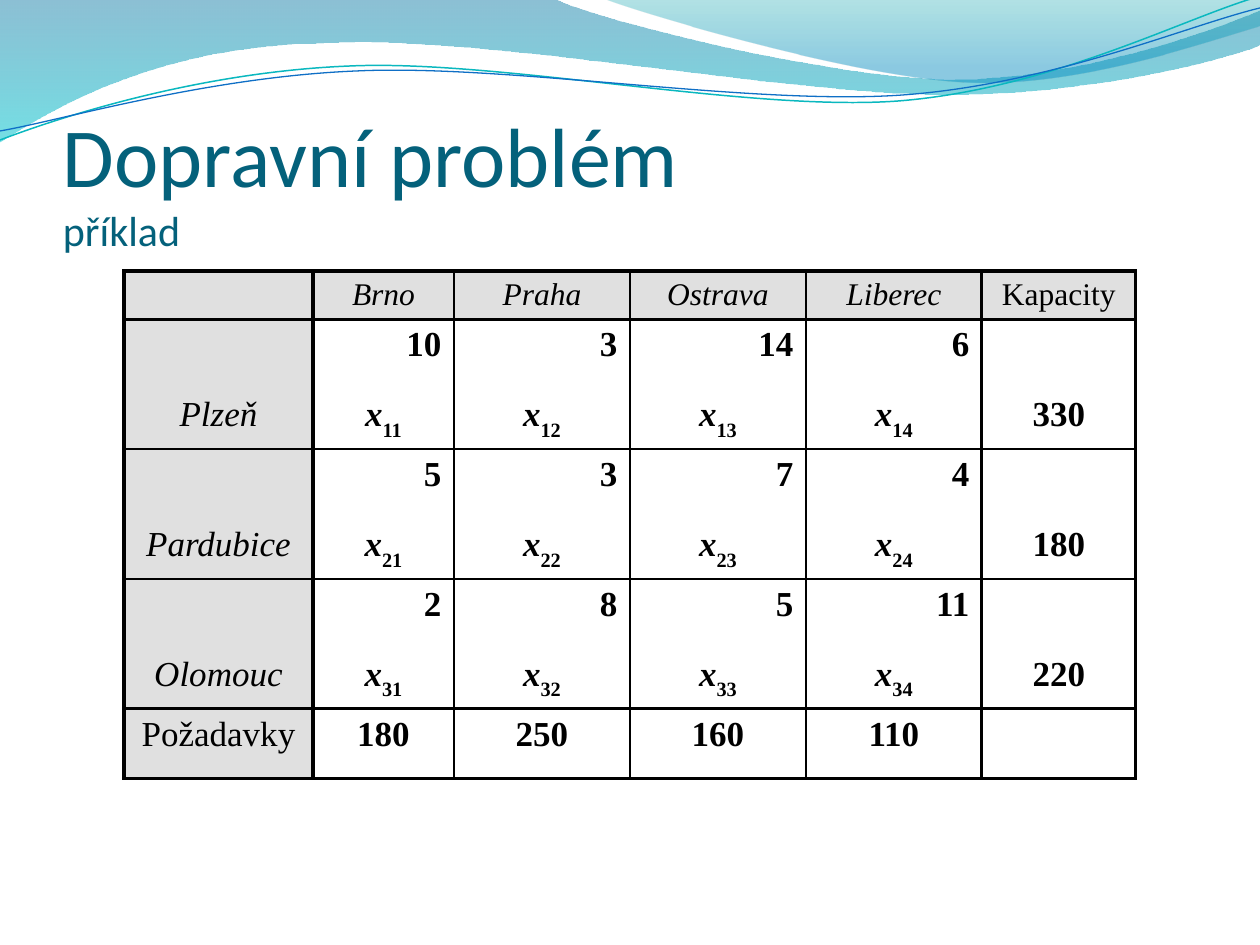
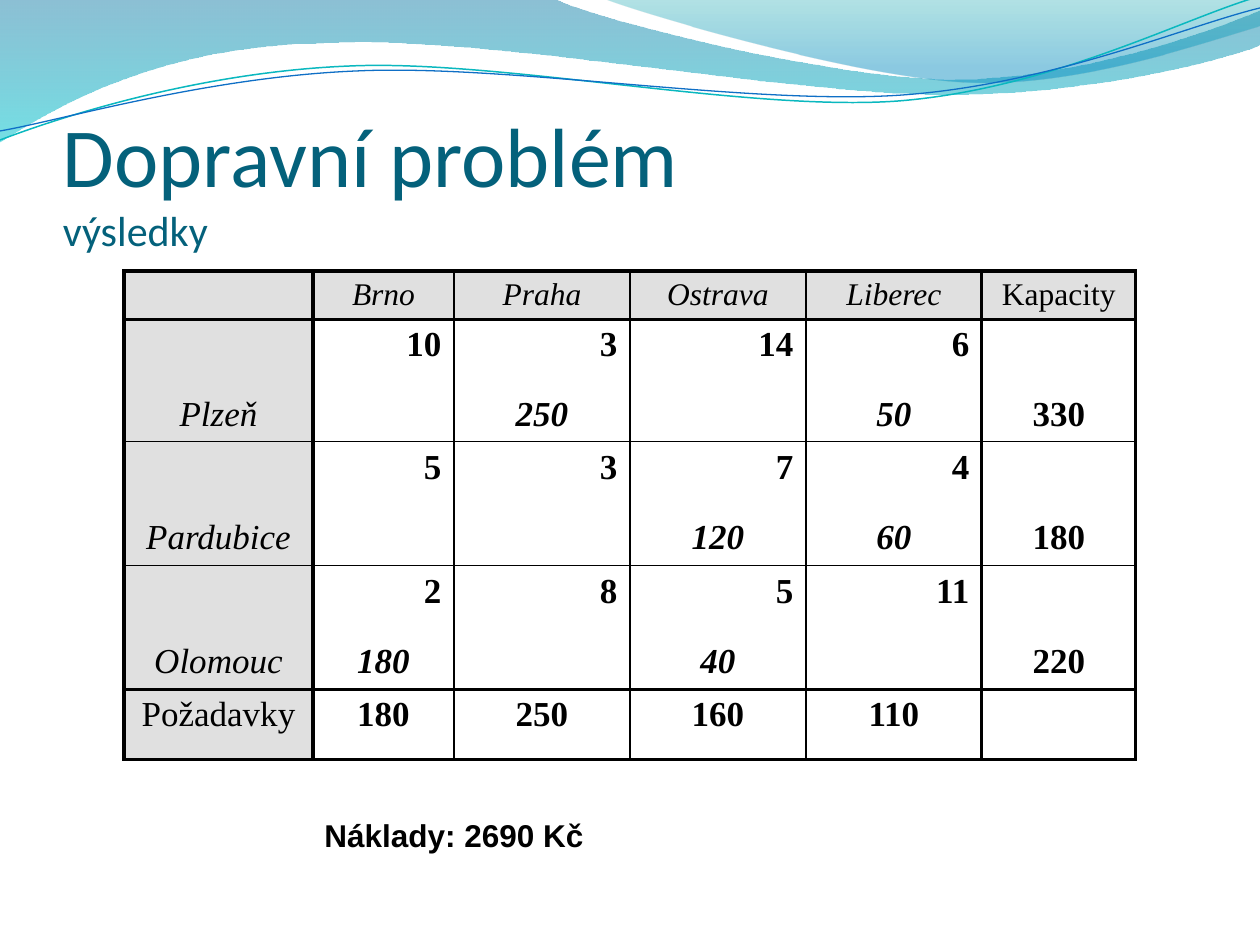
from dataclasses import dataclass

from lxml import etree
from pptx import Presentation
from pptx import util as u
from pptx.dml.color import RGBColor
from pptx.enum import text
from pptx.oxml.ns import qn

EMU_PER_PX = 914400 / 126


@dataclass(frozen=True)
class Theme:
    title: str = "04617B"
    ink: str = "000000"
    shade: str = "E0E0E0"
    line_teal: str = "0AB8BF"
    line_blue: str = "0F6FC6"
    title_font: str = "Calibri"
    table_font: str = "Times New Roman"
    note_font: str = "Arial"
    title_pt: int = 48
    subtitle_pt: int = 24
    head_pt: int = 18
    cell_pt: int = 20
    note_pt: int = 18
    thick: int = 2
    thin: int = 1


T = Theme()

# Gradient stops: position in %, colour, opacity in %
SEA = [(0, "0074A1", 45), (100, "00C6CF", 55)]
SKY = [(0, "00A1A9", 30), (80, "008BBF", 45)]

# Outlines in px: pairs are straight segments, sixes are Bézier curves
WAVE_LEFT = [(0, 0), (554, -1), (600, 21, 837, 79, 955, 79),
             (1075, 79, 1207, 33, 1260, 11), (1261, 45),
             (1239, 55, 1096, 96, 940, 94), (784, 94, 481, 35, 324, 43),
             (163, 45, 58, 105, -1, 142)]
WAVE_RIGHT = [(604, -1), (641, 14, 859, 78, 969, 82),
              (1079, 87, 1211, 40, 1260, 26), (1260, 0)]
TEAL_CURVE = [(0, 140), (60, 117, 199, 72, 349, 66),
              (498, 59, 747, 112, 898, 101), (1050, 89, 1182, 19, 1257, -3)]
BLUE_CURVE = [(0, 131), (59, 121, 207, 77, 357, 71),
              (508, 64, 752, 106, 903, 95), (1053, 84, 1186, 26, 1260, 8)]

# Transport problem
CITIES = ["Brno", "Praha", "Ostrava", "Liberec"]
DEMAND = ["180", "250", "160", "110"]
PLANTS = [("Plzeň", ["10", "3", "14", "6"], "330"),
          ("Pardubice", ["5", "3", "7", "4"], "180"),
          ("Olomouc", ["2", "8", "5", "11"], "220")]
VARIABLES = [[f"x_{i}{j}" for j in range(1, 5)] for i in range(1, 4)]
SHIPMENTS = [["", "250", "", "50"],
             ["", "", "120", "60"],
             ["180", "", "40", ""]]

# Table grid: sizes in px, and line weights at each column and row edge
COLS = [189, 141, 176, 176, 176, 154]
ROWS = [24, 70, 42, 70, 54, 70, 54, 70]
TABLE_HEIGHT = 498
COL_EDGES = [T.thick, T.thick, T.thin, T.thin, T.thin, T.thick, T.thick]
ROW_EDGES = [T.thick, T.thick, 0, T.thin, 0, T.thin, 0, T.thick, T.thick]

# Cell styles: size, bold, italic, alignment
CENTER, RIGHT = text.PP_ALIGN.CENTER, text.PP_ALIGN.RIGHT
CITY = (T.head_pt, False, True, CENTER)
HEAD = (T.head_pt, False, False, CENTER)
PLANT = (T.cell_pt, False, True, CENTER)
LABEL = (T.cell_pt, False, False, CENTER)
COST = (T.cell_pt, True, False, RIGHT)
AMOUNT = (T.cell_pt, True, True, CENTER)
TOTAL = (T.cell_pt, True, False, CENTER)


def px(n):
    return u.Emu(round(n * EMU_PER_PX))


def rgb(value):
    return RGBColor.from_string(value)


def style_run(r, font, size, color, bold=False, italic=False):
    f = r.font
    f.name, f.size, f.bold, f.italic = font, u.Pt(size), bold, italic
    f.color.rgb = rgb(color)


# Waves

def bend(sp, segment, line):
    """Turn a straight segment of a freeform into a Bézier curve."""
    line.tag = qn("a:cubicBezTo")
    line.remove(line[0])
    for x, y in zip(segment[::2], segment[1::2]):
        etree.SubElement(line, qn("a:pt"), x=str(px(x) - sp.left),
                         y=str(px(y) - sp.top))


def add_outline(slide, outline, close):
    ends = [(px(seg[-2]), px(seg[-1])) for seg in outline]
    builder = slide.shapes.build_freeform(*ends[0])
    builder.add_line_segments(ends[1:], close=close)
    sp = builder.convert_to_shape()
    sp.shadow.inherit = False
    lines = list(sp._element.spPr.iter(qn("a:lnTo")))
    for segment, line in zip(outline[1:], lines):
        if len(segment) == 6:
            bend(sp, segment, line)
    return sp


def add_wave(slide, outline, stops):
    sp = add_outline(slide, outline, True)
    sp.line.fill.background()
    sp.fill.gradient()
    sp.fill.gradient_angle = 270
    for stop, (pos, color, _) in zip(sp.fill.gradient_stops, stops):
        stop.position = pos / 100
        stop.color.rgb = rgb(color)
    colors = sp._element.spPr.iter(qn("a:srgbClr"))
    for clr, (_, _, opacity) in zip(colors, stops):
        etree.SubElement(clr, qn("a:alpha"), val=str(opacity * 1000))


def add_curve(slide, outline, color, weight):
    sp = add_outline(slide, outline, False)
    sp.fill.background()
    sp.line.color.rgb = rgb(color)
    sp.line.width = u.Pt(weight)


# Text

def add_text(slide, x, y, w, h, content):
    tf = slide.shapes.add_textbox(px(x), px(y), px(w), px(h)).text_frame
    tf.word_wrap = True
    tf.paragraphs[0].text = content
    return tf


def add_title(slide, title, subtitle):
    tf = add_text(slide, 63, 97, 1134, 158, f"{title} \v{subtitle}")
    tf.vertical_anchor = text.MSO_ANCHOR.BOTTOM
    tf.margin_left = tf.margin_right = tf.margin_bottom = 0
    for r, size in zip(tf.paragraphs[0].runs, (T.title_pt, T.subtitle_pt)):
        style_run(r, T.title_font, size, T.title)


def add_note(slide, content):
    tf = add_text(slide, 312, 810, 427, 50, content)
    style_run(tf.paragraphs[0].runs[0], T.note_font, T.note_pt, T.ink, bold=True)


# Table

def set_border(cell, side, weight):
    ln = etree.SubElement(cell._tc.get_or_add_tcPr(), qn(f"a:ln{side}"))
    if weight:
        ln.set("w", str(u.Pt(weight)))
        fill = etree.SubElement(ln, qn("a:solidFill"))
        etree.SubElement(fill, qn("a:srgbClr"), val=T.ink)
    else:
        etree.SubElement(ln, qn("a:noFill"))


def fill_cell(cell, content, style):
    """Write a cell; what follows an underscore becomes a subscript."""
    size, bold, italic, align = style
    cell.margin_bottom = px(4)
    p = cell.text_frame.paragraphs[0]
    p.alignment = align
    if not content:
        end = etree.SubElement(p._p, qn("a:endParaRPr"), sz=str(size * 100))
        etree.SubElement(end, qn("a:latin"), typeface=T.table_font)
        return
    base, _, index = content.partition("_")
    p.text = base
    style_run(p.runs[0], T.table_font, size, T.ink, bold, italic)
    if index:
        r = p.add_run()
        r.text = index
        style_run(r, T.table_font, size, T.ink, bold)
        r._r.get_or_add_rPr().set("baseline", "-30000")


def table_rows(amounts):
    def row(first, middle, last):
        texts, style = middle
        return [first, *((t, style) for t in texts), last]

    yield row(("", HEAD), (CITIES, CITY), ("Kapacity", HEAD))
    for (plant, costs, capacity), shipped in zip(PLANTS, amounts):
        yield row(("", HEAD), (costs, COST), ("", HEAD))
        yield row((plant, PLANT), (shipped, AMOUNT), (capacity, TOTAL))
    yield row(("Požadavky", LABEL), (DEMAND, TOTAL), ("", HEAD))


def add_transport_table(slide, amounts):
    frame = slide.shapes.add_table(len(ROWS), len(COLS), px(124), px(271),
                                   px(sum(COLS)), px(TABLE_HEIGHT))
    tbl = frame.table
    tbl.first_row = tbl.horz_banding = False
    for col, width in zip(tbl.columns, COLS):
        col.width = px(width)
    for row, height in zip(tbl.rows, ROWS):
        row.height = px(height)
    frame.height = px(TABLE_HEIGHT)
    for i, row in enumerate(table_rows(amounts)):
        for j, (content, style) in enumerate(row):
            cell = tbl.cell(i, j)
            fill_cell(cell, content, style)
            for side, weight in (("L", COL_EDGES[j]), ("R", COL_EDGES[j + 1]),
                                 ("T", ROW_EDGES[i]), ("B", ROW_EDGES[i + 1])):
                set_border(cell, side, weight)
            if i == 0 or j == 0:
                cell.fill.solid()
                cell.fill.fore_color.rgb = rgb(T.shade)
            else:
                cell.fill.background()


def add_problem_slide(prs, subtitle, amounts):
    s = prs.slides.add_slide(prs.slide_layouts[6])
    add_wave(s, WAVE_LEFT, SEA)
    add_wave(s, WAVE_RIGHT, SKY)
    add_curve(s, TEAL_CURVE, T.line_teal, 0.85)
    add_curve(s, BLUE_CURVE, T.line_blue, 0.75)
    add_title(s, "Dopravní problém", subtitle)
    add_transport_table(s, amounts)
    return s


def main():
    prs = Presentation()
    prs.slide_width, prs.slide_height = px(1260), px(945)
    add_problem_slide(prs, "příklad", VARIABLES)
    results = add_problem_slide(prs, "výsledky", SHIPMENTS)
    add_note(results, "Náklady: 2690 Kč")
    prs.save("out.pptx")


if __name__ == "__main__":
    main()
